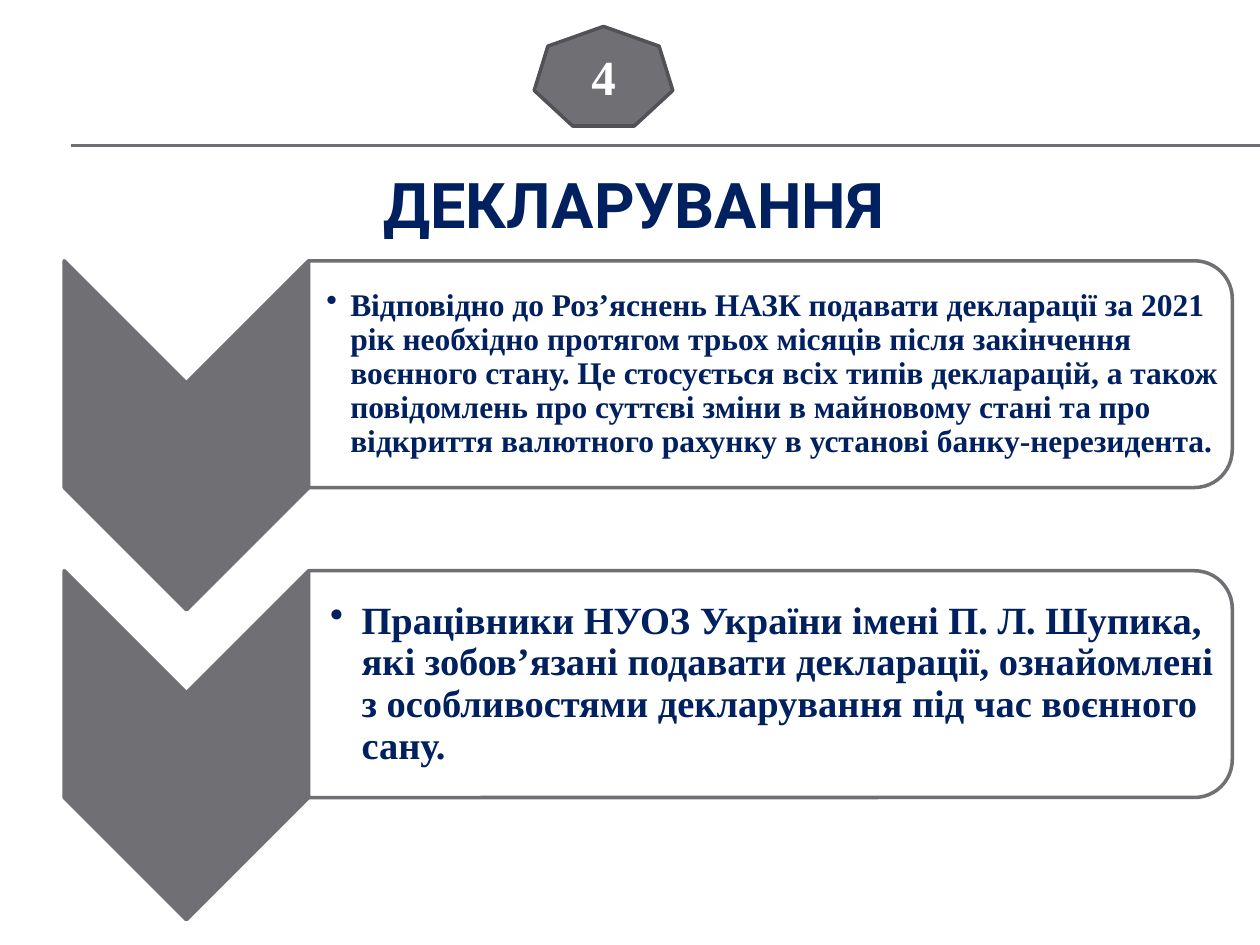
from dataclasses import dataclass

from lxml.etree import SubElement
from pptx import Presentation
from pptx.dml.color import RGBColor
from pptx.enum.shapes import MSO_CONNECTOR, MSO_SHAPE
from pptx.enum.text import MSO_ANCHOR, PP_ALIGN
from pptx.oxml.ns import qn
from pptx.shapes.autoshape import Shape
from pptx.slide import Slide
from pptx.util import Inches, Pt

GRAY = RGBColor(0x6F, 0x6F, 0x74)
DARK_GRAY = RGBColor(0x52, 0x52, 0x56)
NAVY = RGBColor(0x00, 0x20, 0x60)
WHITE = RGBColor(0xFF, 0xFF, 0xFF)
SERIF = "Times New Roman"
ROW_TOP, ROW_PITCH = 2.07, 2.46


@dataclass
class Row:
    text: str
    size: int
    hanging: float
    inset_left: float
    inset: float


ROWS = [
    Row("Відповідно до Роз’яснень НАЗК подавати декларації за 2021 рік необхідно "
        "протягом трьох місяців після закінчення воєнного стану. Це стосується всіх "
        "типів декларацій, а також повідомлень про суттєві зміни в майновому стані "
        "та про відкриття валютного рахунку в установі банку-нерезидента.",
        18, 0.19, 0.14, 0.01),
    Row("Працівники НУОЗ України імені П. Л. Шупика, які зобов’язані подавати "
        "декларації, ознайомлені з особливостями декларування під час воєнного сану.",
        22, 0.25, 0.17, 0.02),
]


def add_rule(page: Slide, y: float) -> None:
    rule = page.shapes.add_connector(
        MSO_CONNECTOR.STRAIGHT, Inches(0.56), Inches(y), Inches(10), Inches(y))
    rule.line.color.rgb = GRAY
    rule.line.width = Pt(0.75)
    SubElement(rule._element.spPr, qn("a:effectLst"))


def add_figure(page: Slide, kind: MSO_SHAPE, left: float, top: float, width: float,
               height: float, fill: RGBColor, line: RGBColor = GRAY) -> Shape:
    figure = page.shapes.add_shape(
        kind, Inches(left), Inches(top), Inches(width), Inches(height))
    figure.shadow.inherit = False
    figure.fill.solid()
    figure.fill.fore_color.rgb = fill
    figure.line.color.rgb = line
    figure.line.width = Pt(2)
    return figure


def add_turned(page: Slide, kind: MSO_SHAPE, left: float, top: float, width: float,
               height: float, fill: RGBColor) -> Shape:
    """Add a shape turned a quarter clockwise to cover the given area."""
    shift = (width - height) / 2
    figure = add_figure(page, kind, left + shift, top - shift, height, width, fill)
    figure.rotation = 90
    return figure


def write(box: Shape, text: str, font: str, size: int, color: RGBColor,
          align: PP_ALIGN = PP_ALIGN.CENTER, hanging: float = 0) -> None:
    frame = box.text_frame
    frame.word_wrap = True
    frame.vertical_anchor = MSO_ANCHOR.MIDDLE
    para = frame.paragraphs[0]
    para.text = text
    para.alignment = align
    if hanging:
        para.line_spacing = 0.9
        properties = para._p.get_or_add_pPr()
        properties.set("marL", str(Inches(hanging)))
        properties.set("indent", str(-Inches(hanging)))
        SubElement(properties, qn("a:buChar"), char="•")
    para.font.name = font
    para.font.size = Pt(size)
    para.font.bold = True
    para.font.color.rgb = color


def add_row(page: Slide, row: Row, top: float) -> None:
    add_turned(page, MSO_SHAPE.CHEVRON, 0.51, top, 1.94, 2.77, GRAY)
    panel = add_turned(page, MSO_SHAPE.ROUND_2_SAME_RECTANGLE, 2.45, top, 7.33, 1.8, WHITE)
    color = panel._element.spPr.find(qn("a:solidFill"))[0]
    SubElement(color, qn("a:alpha"), val="90000")

    box = page.shapes.add_textbox(
        Inches(2.45), Inches(top + 0.09), Inches(7.24), Inches(1.62))
    frame = box.text_frame
    frame.margin_left = Inches(row.inset_left)
    frame.margin_top = frame.margin_right = frame.margin_bottom = Inches(row.inset)
    write(box, row.text, SERIF, row.size, NAVY, PP_ALIGN.LEFT, row.hanging)


def main() -> None:
    deck = Presentation()
    deck.slide_width, deck.slide_height = Inches(10), Inches(7.5)
    page = deck.slides.add_slide(deck.slide_layouts[6])

    # Header rules, title and number badge
    for y in (1.15, 1.16):
        add_rule(page, y)
    title = page.shapes.add_textbox(Inches(0.28), Inches(1.15), Inches(9.5), Inches(0.92))
    write(title, "ДЕКЛАРУВАННЯ", "Roboto", 36, NAVY)
    badge = add_figure(page, MSO_SHAPE.HEPTAGON, 4.24, 0.21, 1.1, 0.79, GRAY, DARK_GRAY)
    write(badge, "4", SERIF, 28, WHITE)

    # Chevron list
    for index, row in enumerate(ROWS):
        add_row(page, row, ROW_TOP + index * ROW_PITCH)

    deck.save("out.pptx")


if __name__ == "__main__":
    main()
